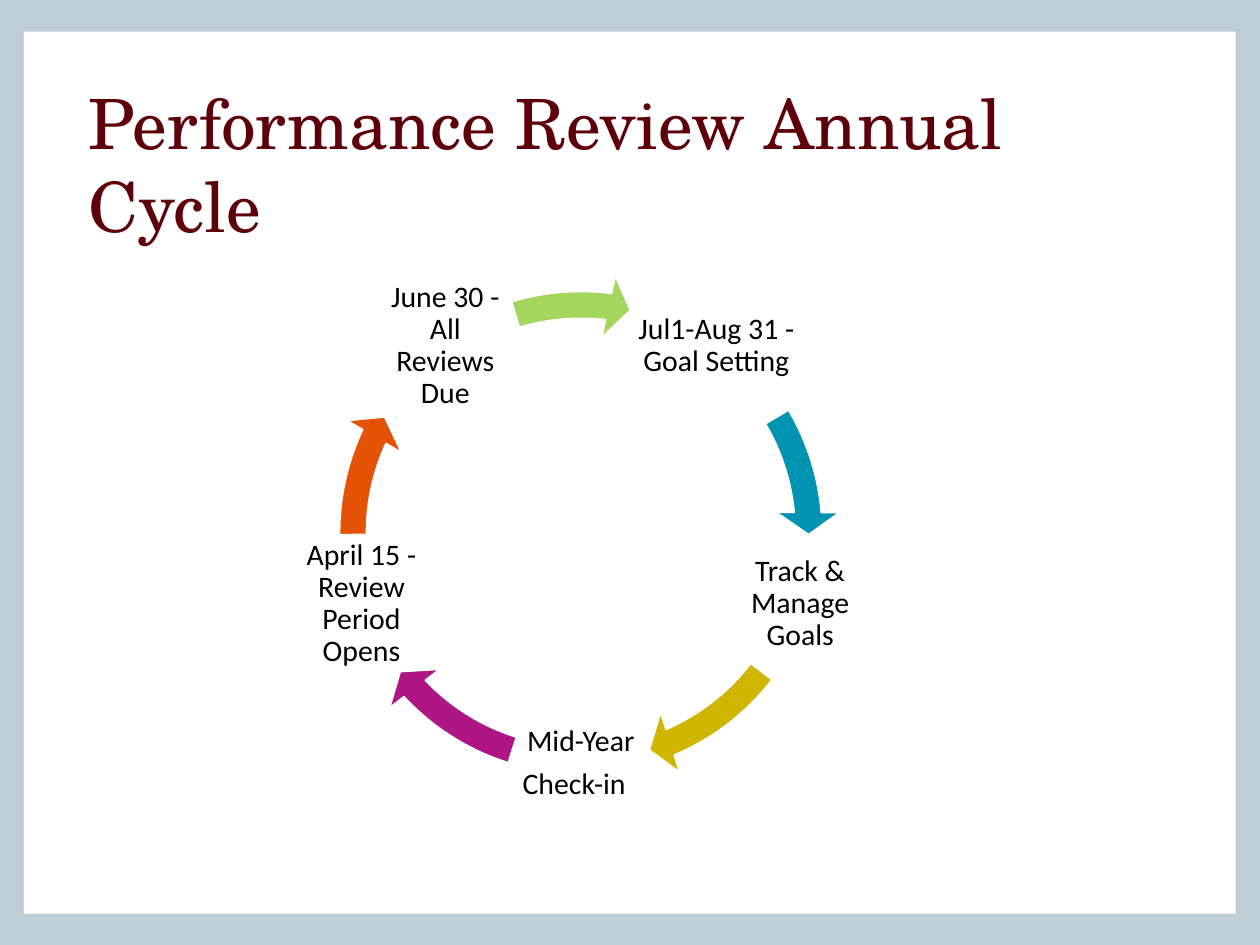
"""Build the slide showing the annual performance review cycle."""
from dataclasses import dataclass
from math import cos, radians, sin

from pptx import Presentation
from pptx import util as u
from pptx.dml.color import RGBColor
from pptx.enum import shapes, text

COLORS = {
    "frame": "BFCED6", "panel": "FFFFFF", "title": "5E0009", "label": "000000",
    "blue": "0093B2", "gold": "CFB500", "purple": "AF1685",
    "orange": "E35205", "green": "A4D65E",
}
CENTER_X, CENTER_Y, RADIUS = 11.71, 10.74, 4.65
ARROW_SIZE, LABEL_HEIGHT = 10.46, 2.79
FRAME = {"word_wrap": True, "auto_size": text.MSO_AUTO_SIZE.NONE,
         "vertical_anchor": text.MSO_ANCHOR.MIDDLE}
LABEL_PARAGRAPH = {"alignment": text.PP_ALIGN.CENTER, "line_spacing": 0.9,
                   "space_before": u.Pt(0), "space_after": u.Pt(6)}
LABEL_FONT = {"name": "Calibri", "size": u.Pt(17)}
TITLE_FONT = {"name": "TeX Gyre Schola", "size": u.Pt(39.6)}


@dataclass
class Stage:
    """A step of the cycle and the arrow leaving it, with angles in degrees."""
    lines: tuple[str, ...]
    color: str
    start: float
    end: float
    width: float = 2.79
    last_indent: float = 0


STAGES = [
    Stage(("Jul1-Aug 31 - Goal Setting",), "blue", 329.44, 354.88, width=3.43),
    Stage(("Track & Manage Goals",), "gold", 37.56, 66.9),
    Stage(("Mid-Year", "Check-in"), "purple", 107.5, 136.84, last_indent=0.27),
    Stage(("April 15 - Review Period Opens",), "orange", 179.52, 204.96),
    Stage(("June 30 - All Reviews Due",), "green", 253.31, 276.98),
]


def rgb(name: str) -> RGBColor:
    """Return the named palette colour."""
    return RGBColor.from_string(COLORS[name])


def apply(target, values: dict) -> None:
    """Set each attribute in values on target."""
    for name, value in values.items():
        setattr(target, name, value)


def set_frame(tf, inset: float) -> None:
    """Format a text frame with equal insets."""
    apply(tf, FRAME)
    apply(tf, {f"margin_{side}": u.Cm(inset)
               for side in ("left", "top", "right", "bottom")})


def add_filled(s, kind, box: tuple, color: str):
    """Add a flat preset shape."""
    sp = s.shapes.add_shape(kind, *map(u.Cm, box))
    sp.shadow.inherit = False
    sp.fill.solid()
    sp.fill.fore_color.rgb = rgb(color)
    return sp


def add_panel(s) -> None:
    """Place the white panel behind everything else."""
    sp = add_filled(s, shapes.MSO_SHAPE.RECTANGLE, (0.48, 0.64, 24.43, 17.78), "panel")
    sp.line.fill.background()
    s.shapes._spTree.insert(2, sp._element)


def add_title(s, title: str) -> None:
    """Fill, move and format the title placeholder."""
    sp = s.shapes.title
    apply(sp, dict(zip(("left", "top", "width", "height"),
                       map(u.Cm, (1.78, 1.9, 21.84, 2.79)))))
    tf = sp.text_frame
    tf.text = title
    set_frame(tf, 0)
    p = tf.paragraphs[0]
    p.alignment = text.PP_ALIGN.LEFT
    r = p.runs[0]
    apply(r.font, TITLE_FONT)
    r.font.color.rgb = rgb("title")


def add_label(s, stage: Stage, angle: float) -> None:
    """Centre a stage label on the circle at the given angle."""
    x = CENTER_X + RADIUS * cos(radians(angle)) - stage.width / 2
    y = CENTER_Y + RADIUS * sin(radians(angle)) - LABEL_HEIGHT / 2
    sp = s.shapes.add_textbox(*map(u.Cm, (x, y, stage.width, LABEL_HEIGHT)))
    tf = sp.text_frame
    set_frame(tf, 0.05)
    tf.text = "\n".join(stage.lines)
    for p in tf.paragraphs:
        apply(p, LABEL_PARAGRAPH)
        r = p.runs[0]
        apply(r.font, LABEL_FONT)
        r.font.color.rgb = rgb("label")
    if stage.last_indent:
        p._p.get_or_add_pPr().set("marR", str(u.Cm(stage.last_indent)))


def add_arrow(s, stage: Stage) -> None:
    """Draw the curved arrow that leaves a stage."""
    box = (CENTER_X - ARROW_SIZE / 2, CENTER_Y - ARROW_SIZE / 2, ARROW_SIZE, ARROW_SIZE)
    sp = add_filled(s, shapes.MSO_SHAPE.CIRCULAR_ARROW, box, stage.color)
    sp.line.color.rgb = rgb("panel")
    sp.line.width = u.Pt(1)
    values = (0.052, 5.6 * 0.6, stage.end * 0.6, stage.start * 0.6, 0.061)
    for i, value in enumerate(values):
        sp.adjustments[i] = value


def main() -> None:
    """Create the presentation and save it."""
    prs = Presentation()
    prs.slide_width, prs.slide_height = u.Cm(25.4), u.Cm(19.05)
    s = prs.slides.add_slide(prs.slide_layouts[5])
    s.background.fill.solid()
    s.background.fill.fore_color.rgb = rgb("frame")
    add_panel(s)
    add_title(s, "Performance Review Annual Cycle")
    for i, stage in enumerate(STAGES):
        add_label(s, stage, -54 + i * 360 / len(STAGES))
        add_arrow(s, stage)
    prs.save("out.pptx")


if __name__ == "__main__":
    main()
